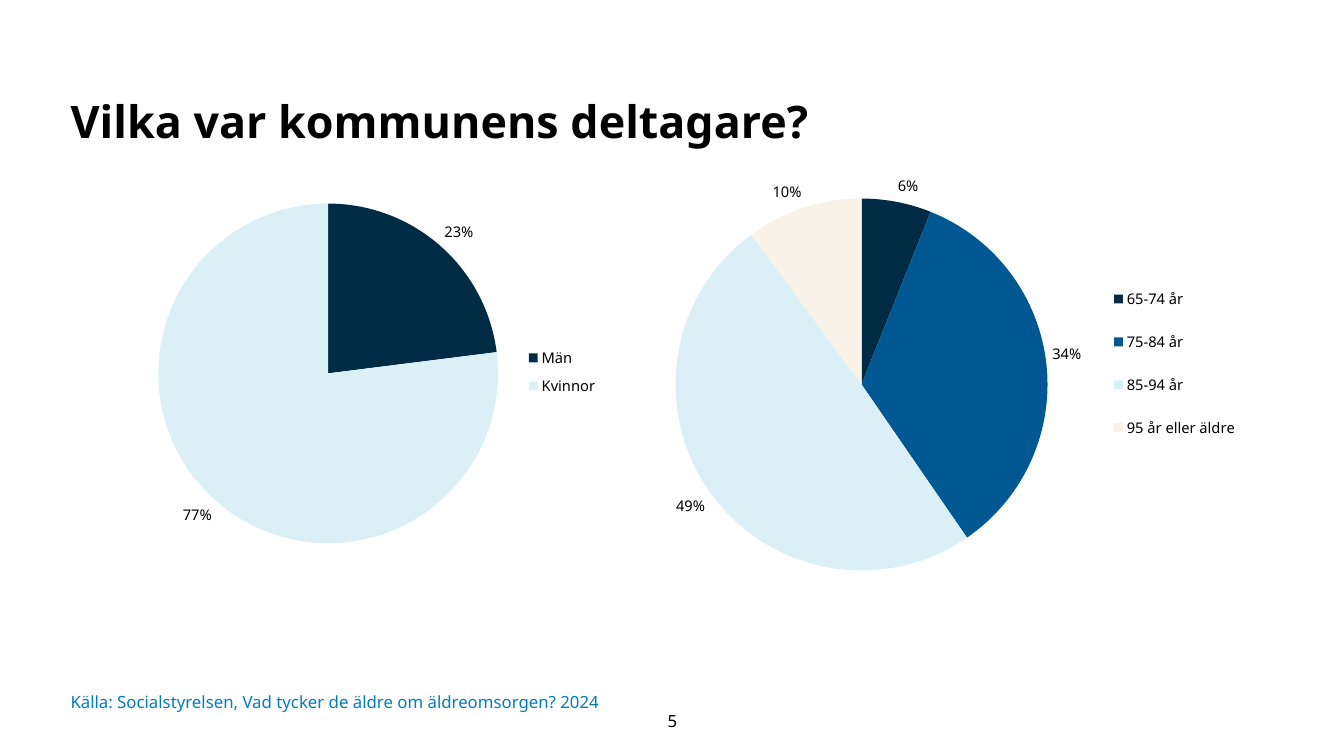
from lxml import etree
from pptx import Presentation
from pptx.chart.data import CategoryChartData
from pptx.dml.color import RGBColor
from pptx.enum.chart import XL_CHART_TYPE as ChartType
from pptx.enum.chart import XL_LABEL_POSITION as LabelPos
from pptx.enum.chart import XL_LEGEND_POSITION as LegendPos
from pptx.enum.text import MSO_ANCHOR as Anchor
from pptx.enum.text import MSO_AUTO_SIZE as AutoSize
from pptx.enum.text import PP_ALIGN as Align
from pptx.oxml.ns import qn
from pptx.util import Inches, Pt

FONT = "Noto Sans"
COLORS = {"text": "000000", "source": "017CC1", "navy": "002B45",
          "blue": "005892", "ice": "DBF0F6", "cream": "F8F2E8"}

TITLE = "Vilka var kommunens deltagare?"
SOURCE = "Källa: Socialstyrelsen, Vad tycker de äldre om äldreomsorgen? 2024"
PAGE = "5"

# box, pie and legend are left, top, width, height in inches on the slide
PIES = [
    {"box": (0.22, 1.29, 6.79, 4.71), "pie": (1.57, 2.02, 3.37, 3.37),
     "legend": (5.15, 3.37, 0.85, 0.64),
     "slices": [("Män", 23, "navy"), ("Kvinnor", 77, "ice")]},
    {"box": (5.92, 1.6, 6.79, 4.2), "pie": (6.7, 1.97, 3.69, 3.69),
     "legend": (10.9, 2.64, 1.5, 1.93),
     "slices": [("65-74 år", 6, "navy"), ("75-84 år", 34, "blue"),
                ("85-94 år", 49, "ice"), ("95 år eller äldre", 10, "cream")]},
]


def rgb(name):
    return RGBColor.from_string(COLORS[name])


def style(font, size, color="text", bold=False):
    font.name, font.size, font.bold = FONT, Pt(size), bold
    font.color.rgb = rgb(color)


def set_layout(parent, box, area, after, inner=False):
    """Fix a chart part to an area of the slide, as fractions of the chart box."""
    for old in parent.findall(qn("c:layout")):
        parent.remove(old)
    layout = etree.Element(qn("c:layout"))
    manual = etree.SubElement(layout, qn("c:manualLayout"))
    x, y, w, h = area
    left, top, width, height = box
    settings = [("xMode", "edge"), ("yMode", "edge"),
                ("x", (x - left) / width), ("y", (y - top) / height),
                ("w", w / width), ("h", h / height)]
    if inner:
        settings.insert(0, ("layoutTarget", "inner"))
    for tag, value in settings:
        etree.SubElement(manual, qn(f"c:{tag}")).set("val", str(value))
    if after is None:
        parent.insert(0, layout)
    else:
        after.addnext(layout)


def add_pie(slide, box, pie, legend, slices):
    names, values, colors = zip(*slices)
    data = CategoryChartData()
    data.categories = names
    data.add_series("Series 1", values)
    chart = slide.shapes.add_chart(
        ChartType.PIE, *(Inches(v) for v in box), data).chart
    style(chart.font, 10)
    chart.has_title = False

    chart.has_legend = True
    chart.legend.position = LegendPos.RIGHT
    chart.legend.include_in_layout = False
    style(chart.legend.font, 10.5)

    plot = chart.plots[0]
    plot.vary_by_categories = True
    for i, color in enumerate(colors):
        fill = plot.series[0].points[i].format.fill
        fill.solid()
        fill.fore_color.rgb = rgb(color)

    plot.has_data_labels = True
    labels = plot.data_labels
    labels.show_percentage, labels.show_value = True, False
    labels.number_format, labels.number_format_is_linked = "0%", False
    labels.position = LabelPos.OUTSIDE_END
    style(labels.font, 10.5)

    plot_area = chart.element.find(".//" + qn("c:plotArea"))
    set_layout(plot_area, box, pie, None, inner=True)
    key = chart.element.find(".//" + qn("c:legend"))
    set_layout(key, box, legend, key.find(qn("c:legendPos")))


def add_text(slide, box, text, color="text", align=Align.LEFT):
    tf = slide.shapes.add_textbox(*(Inches(v) for v in box)).text_frame
    tf.word_wrap = True
    tf.vertical_anchor = Anchor.MIDDLE
    tf.margin_left = tf.margin_right = tf.margin_top = tf.margin_bottom = 0
    p = tf.paragraphs[0]
    p.alignment = align
    r = p.add_run()
    r.text = text
    style(r.font, 12, color)


def add_title(slide):
    sp = slide.shapes.title
    sp.left, sp.top = Inches(0.7), Inches(0.88)
    sp.width, sp.height = Inches(10.63), Inches(0.53)
    tf = sp.text_frame
    tf.auto_size = AutoSize.NONE
    tf.vertical_anchor = Anchor.TOP
    tf.margin_left = tf.margin_top = 0
    p = tf.paragraphs[0]
    p.alignment, p.line_spacing = Align.LEFT, 1.1
    r = p.add_run()
    r.text = TITLE
    style(r.font, 32, bold=True)


def main():
    prs = Presentation()
    prs.slide_width, prs.slide_height = Inches(13.33), Inches(7.5)
    slide = prs.slides.add_slide(prs.slide_layouts[5])
    add_title(slide)
    for pie in PIES:
        add_pie(slide, **pie)
    add_text(slide, (0.7, 6.76, 5.56, 0.4), SOURCE, "source")
    add_text(slide, (6.16, 6.95, 1.02, 0.4), PAGE, align=Align.CENTER)
    prs.save("out.pptx")


if __name__ == "__main__":
    main()
